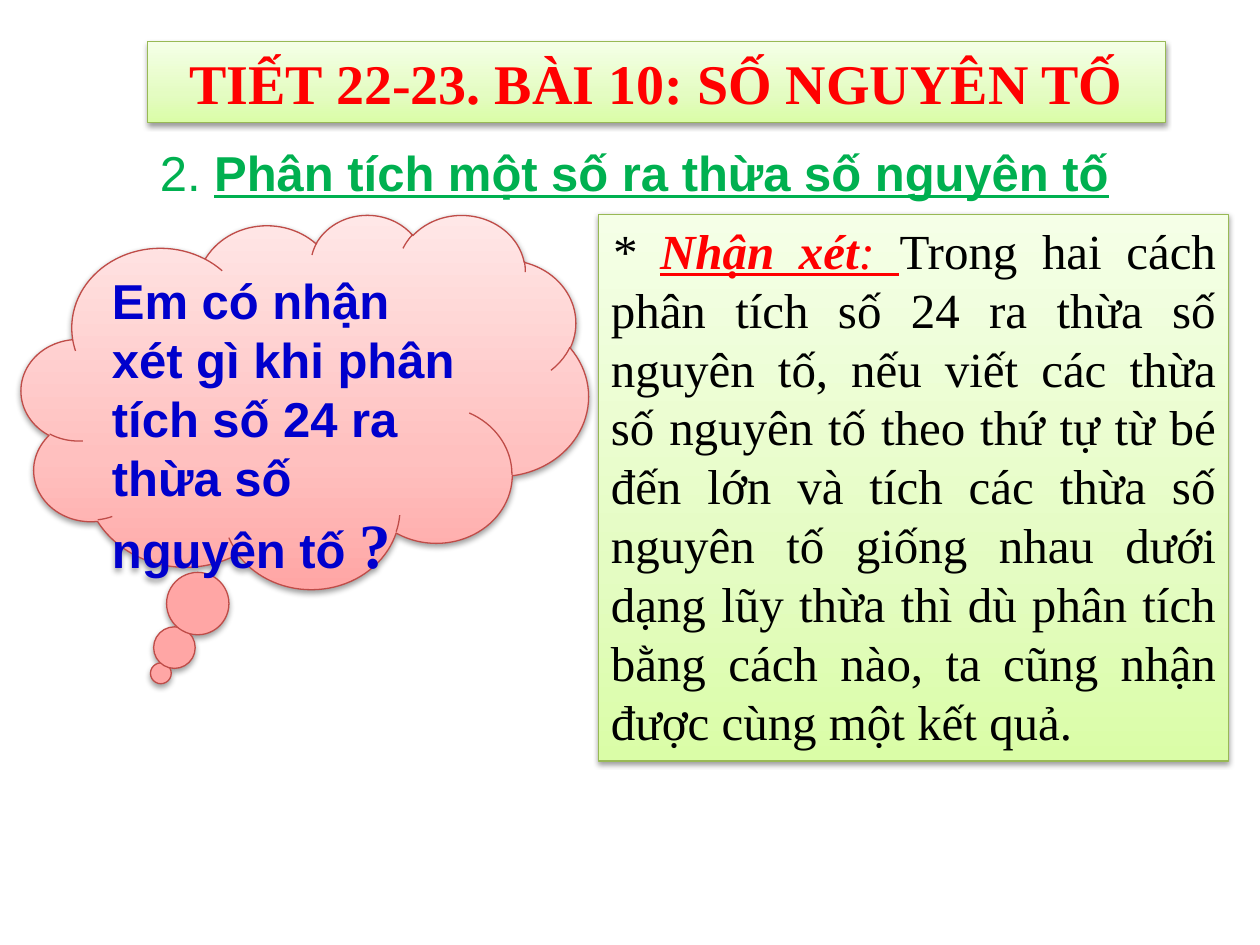
from lxml import etree
from pptx import Presentation
from pptx.dml.color import RGBColor
from pptx.enum.shapes import MSO_SHAPE as Shape
from pptx.enum.text import MSO_ANCHOR as Anchor, MSO_AUTO_SIZE as AutoSize, PP_ALIGN as Align
from pptx.oxml import parse_xml
from pptx.oxml.ns import nsdecls, qn
from pptx.util import Inches, Pt

GREEN = ["DAFDA7", "E4FCC2", "F5FFE7"]
PINK = ["FFA6A5", "FFC0BF", "FFE7E7"]
SERIF = "Times New Roman"


def style_panel(shape, stops, line):
    """Give a shape an upward three-stop gradient, a thin line and a soft shadow."""
    shape.fill.gradient()
    shape.fill.gradient_angle = 90
    properties = shape._element.spPr
    stop_list = properties.find(".//" + qn("a:gsLst"))
    for stop in list(stop_list):
        stop_list.remove(stop)
    for position, color in zip((0, 35000, 100000), stops):
        stop = etree.SubElement(stop_list, qn("a:gs"), pos=str(position))
        etree.SubElement(stop, qn("a:srgbClr"), val=color)
    shape.line.color.rgb = RGBColor.from_string(line)
    shape.line.width = Pt(0.75)
    shape.shadow.inherit = False
    properties.remove(properties.find(qn("a:effectLst")))
    properties.append(parse_xml(
        f'<a:effectLst {nsdecls("a")}>'
        '<a:outerShdw blurRad="40000" dist="20000" dir="5400000" rotWithShape="0">'
        '<a:srgbClr val="000000"><a:alpha val="38000"/></a:srgbClr>'
        '</a:outerShdw></a:effectLst>'))


def write(shape, size, font, color, spans, align=Align.LEFT):
    """Fill the first paragraph with (text, font settings) spans."""
    frame = shape.text_frame
    frame.word_wrap = True
    para = frame.paragraphs[0]
    para.alignment = align
    para.font.size = Pt(size)
    para.font.name = font
    para.font.color.rgb = RGBColor.from_string(color)
    for text, settings in spans:
        span = para.add_run()
        span.text = text
        for name, value in settings.items():
            if name == "color":
                span.font.color.rgb = RGBColor.from_string(value)
            else:
                setattr(span.font, name, value)


deck = Presentation()
deck.slide_width, deck.slide_height = Inches(10), Inches(7.5)
page = deck.slides.add_slide(deck.slide_layouts[5])

# Lesson title
title = page.shapes.title
title.left, title.top = Inches(1.17), Inches(0.33)
title.width, title.height = Inches(8.08), Inches(0.64)
style_panel(title, GREEN, "98B955")
write(title, 32, SERIF, "FF0000",
      [("TIẾT 22-23. BÀI 10: SỐ NGUYÊN TỐ", {"bold": True})], Align.CENTER)
title.text_frame.auto_size = AutoSize.NONE
title.text_frame.vertical_anchor = Anchor.MIDDLE

# Section heading
heading = page.shapes.add_textbox(Inches(1.17), Inches(1.08), Inches(8.08), Inches(0.57))
write(heading, 28, "Arial", "00B050", [
    ("2. ", {}),
    ("Phân tích một số ra thừa số nguyên tố", {"bold": True, "underline": True}),
])

# Question in the thought cloud
cloud = page.shapes.add_shape(
    Shape.CLOUD_CALLOUT, Inches(0.17), Inches(1.7), Inches(4.5), Inches(2.97))
cloud.adjustments[0], cloud.adjustments[1] = -0.254, 0.727
style_panel(cloud, PINK, "BF4C48")
write(cloud, 28, "Arial", "0000CC", [
    ("Em có nhận xét gì khi phân tích số 24 ra thừa số nguyên tố ", {"bold": True}),
    ("?", {"bold": True, "size": Pt(36), "name": SERIF}),
])
cloud.text_frame.vertical_anchor = Anchor.TOP
cloud.text_frame.margin_top = 0

# Remark
remark = page.shapes.add_shape(
    Shape.RECTANGLE, Inches(4.75), Inches(1.7), Inches(5), Inches(4.34))
style_panel(remark, GREEN, "98B955")
red = {"color": "FF0000", "underline": True}
write(remark, 28, SERIF, "000000", [
    ("* ", {"italic": True}),
    ("Nhận xét", {**red, "bold": True, "italic": True}),
    (":", {**red, "italic": True}),
    (" ", red),
    ("Trong hai cách phân tích số 24 ra thừa số nguyên tố, nếu viết các thừa số "
     "nguyên tố theo thứ tự từ bé đến lớn và tích các thừa số nguyên tố giống nhau "
     "dưới dạng lũy thừa thì dù phân tích bằng cách nào, ta cũng nhận được cùng "
     "một kết quả.", {}),
], Align.JUSTIFY)
remark.text_frame.vertical_anchor = Anchor.TOP

deck.save("out.pptx")
